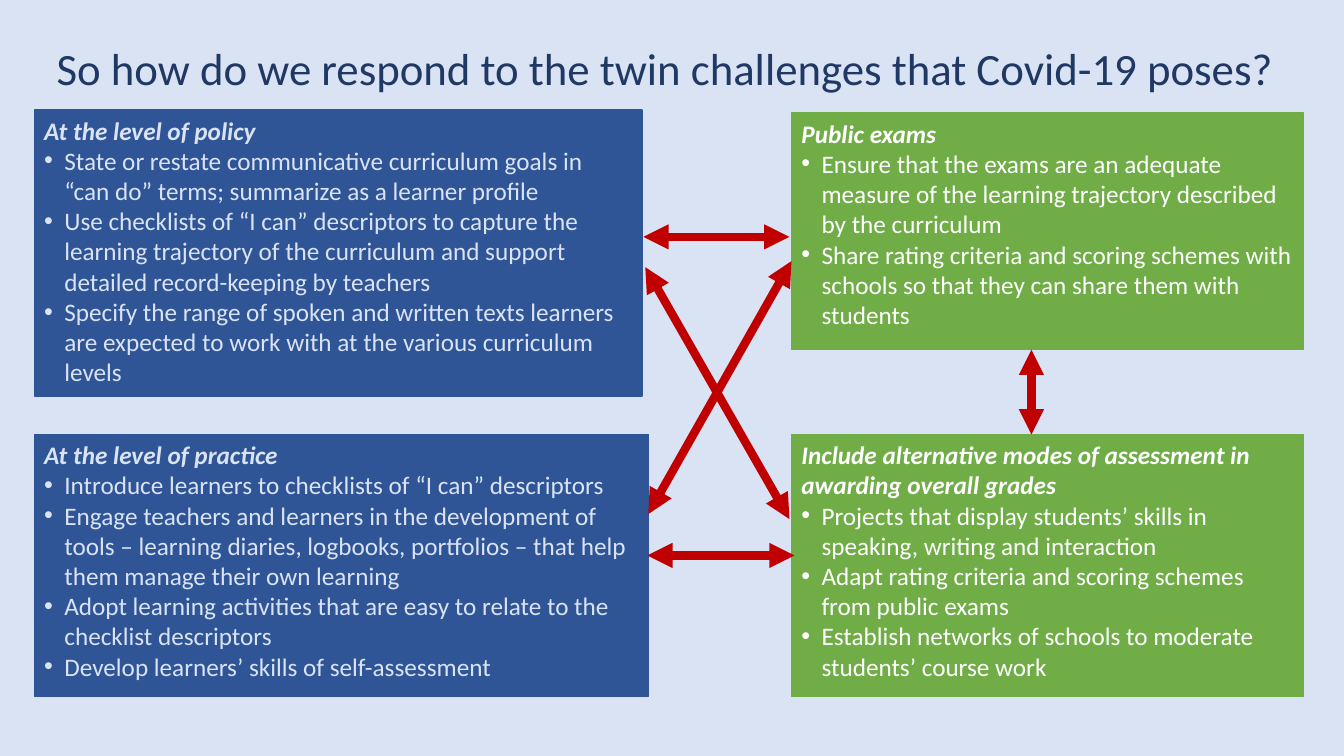
from lxml import etree
from pptx import Presentation
from pptx.dml.color import RGBColor
from pptx.enum import shapes, text
from pptx.oxml import ns
from pptx.util import Inches, Pt

SKY = RGBColor(0xDA, 0xE3, 0xF3)
NAVY = RGBColor(0x20, 0x38, 0x64)
BLUE = RGBColor(0x2F, 0x55, 0x97)
GREEN = RGBColor(0x70, 0xAD, 0x47)
WHITE = RGBColor(0xFF, 0xFF, 0xFF)
RED = RGBColor(0xC0, 0x00, 0x00)

PANELS = [
    ((0.34, 1.09, 6.03, 2.84), BLUE, SKY, "At the level of policy", [
        "State or restate communicative curriculum goals in “can do” terms; "
        "summarize as a learner profile",
        "Use checklists of “I can” descriptors to capture the learning trajectory "
        "of the curriculum and support detailed record-keeping by teachers",
        "Specify the range of spoken and written texts learners are expected to "
        "work with at the various curriculum levels",
    ]),
    ((7.85, 1.12, 5.08, 2.35), GREEN, WHITE, "Public exams", [
        "Ensure that the exams are an adequate measure of the learning trajectory "
        "described by the curriculum",
        "Share rating criteria and scoring schemes with schools so that they can "
        "share them with students",
    ]),
    ((0.34, 4.31, 6.09, 2.6), BLUE, SKY, "At the level of practice", [
        "Introduce learners to checklists of “I can” descriptors",
        "Engage teachers and learners in the development of tools – learning "
        "diaries, logbooks, portfolios – that help them manage their own learning",
        "Adopt learning activities that are easy to relate to the checklist "
        "descriptors",
        "Develop learners’ skills of self-assessment",
    ]),
    ((7.85, 4.31, 5.08, 2.6), GREEN, WHITE,
     "Include alternative modes of assessment in awarding overall grades", [
        "Projects that display students’ skills in speaking, writing and interaction",
        "Adapt rating criteria and scoring schemes from public exams",
        "Establish networks of schools to moderate students’ course work",
    ]),
]

ARROWS = [
    (7.83, 2.35, 6.38, 2.35),
    (7.88, 5.51, 6.42, 5.51),
    (10.23, 3.47, 10.23, 4.31),
    (6.4, 2.65, 7.83, 5.15),
    (7.85, 2.59, 6.43, 5.1),
]


def style(para, size, color, strong=False):
    for run in para.runs:
        font = run.font
        font.name, font.size = "Calibri", Pt(size)
        font.bold = font.italic = strong
        font.color.rgb = color


def bullet(para):
    props = para._p.get_or_add_pPr()
    props.set("marL", str(Inches(0.2)))
    props.set("indent", str(-Inches(0.2)))
    face = etree.SubElement(props, ns.qn("a:buFont"))
    face.set("typeface", "Arial")
    mark = etree.SubElement(props, ns.qn("a:buChar"))
    mark.set("char", "•")


deck = Presentation()
deck.slide_width, deck.slide_height = Inches(13.33), Inches(7.5)
slide = deck.slides.add_slide(deck.slide_layouts[6])
slide.background.fill.solid()
slide.background.fill.fore_color.rgb = SKY

# Title
title = slide.shapes.add_textbox(Inches(0), Inches(0.4), Inches(13.2), Inches(0.61))
frame = title.text_frame
frame.word_wrap = True
frame.vertical_anchor = text.MSO_ANCHOR.MIDDLE
frame.text = "So how do we respond to the twin challenges that Covid-19 poses?"
head = frame.paragraphs[0]
head.alignment = text.PP_ALIGN.CENTER
head.line_spacing = 0.9
style(head, 32, NAVY)

# Panels
for place, fill, ink, topic, points in PANELS:
    box = slide.shapes.add_shape(shapes.MSO_SHAPE.RECTANGLE, *map(Inches, place))
    box.shadow.inherit = False
    box.fill.solid()
    box.fill.fore_color.rgb = fill
    box.line.color.rgb = fill
    box.line.width = Pt(1)
    frame = box.text_frame
    frame.word_wrap = True
    frame.vertical_anchor = text.MSO_ANCHOR.TOP
    frame.text = "\n".join([topic] + points)
    for i, para in enumerate(frame.paragraphs):
        para.alignment = text.PP_ALIGN.LEFT
        if i > 0:
            bullet(para)
        style(para, 18, ink, strong=i == 0)

# Double-headed arrows
for ends in ARROWS:
    arrow = slide.shapes.add_connector(shapes.MSO_CONNECTOR.STRAIGHT, *map(Inches, ends))
    arrow.line.color.rgb = RED
    arrow.line.width = Pt(6)
    line = arrow.line._get_or_add_ln()
    for tip in ("a:headEnd", "a:tailEnd"):
        etree.SubElement(line, ns.qn(tip)).set("type", "triangle")
    etree.SubElement(arrow._element.spPr, ns.qn("a:effectLst"))

deck.save("out.pptx")
